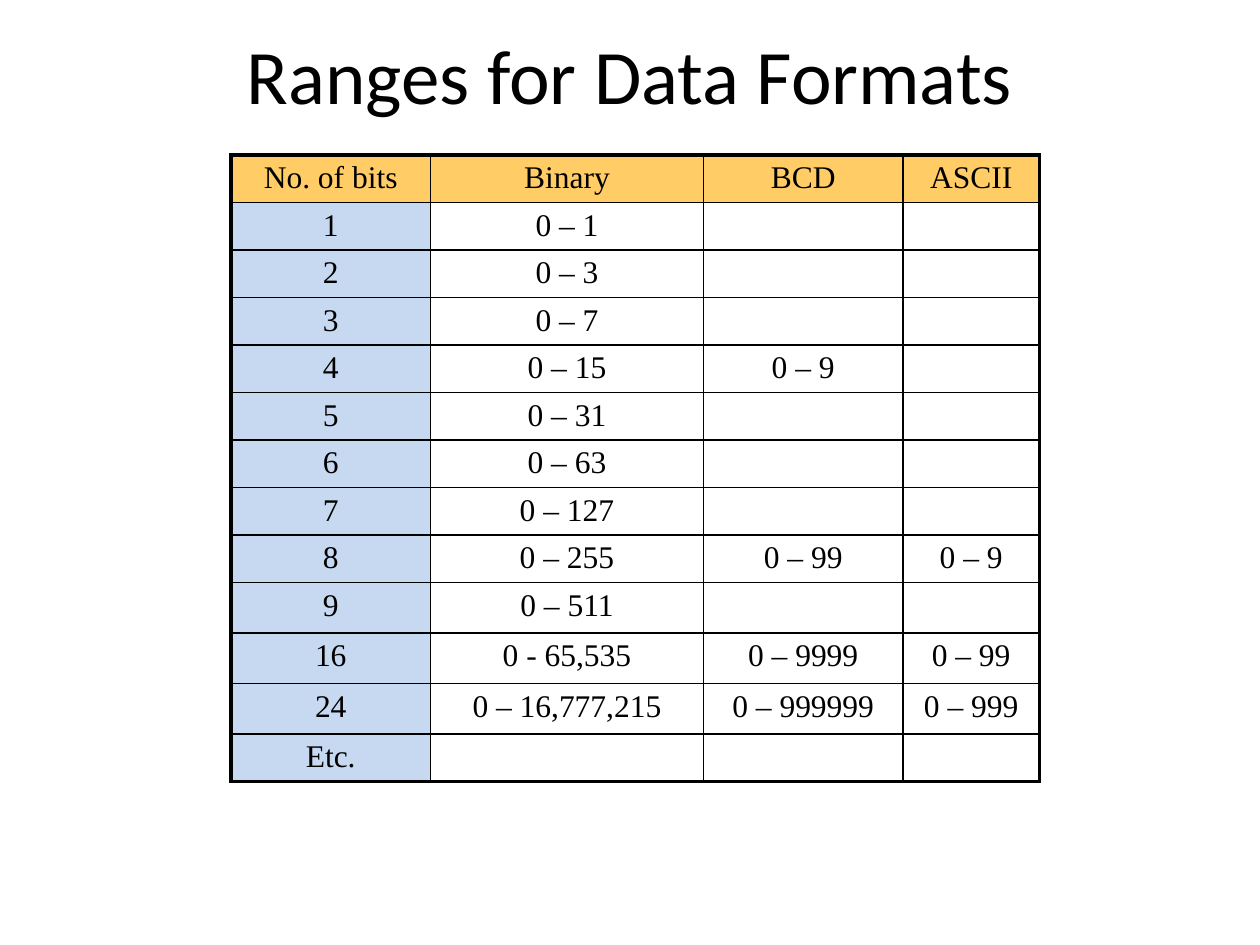
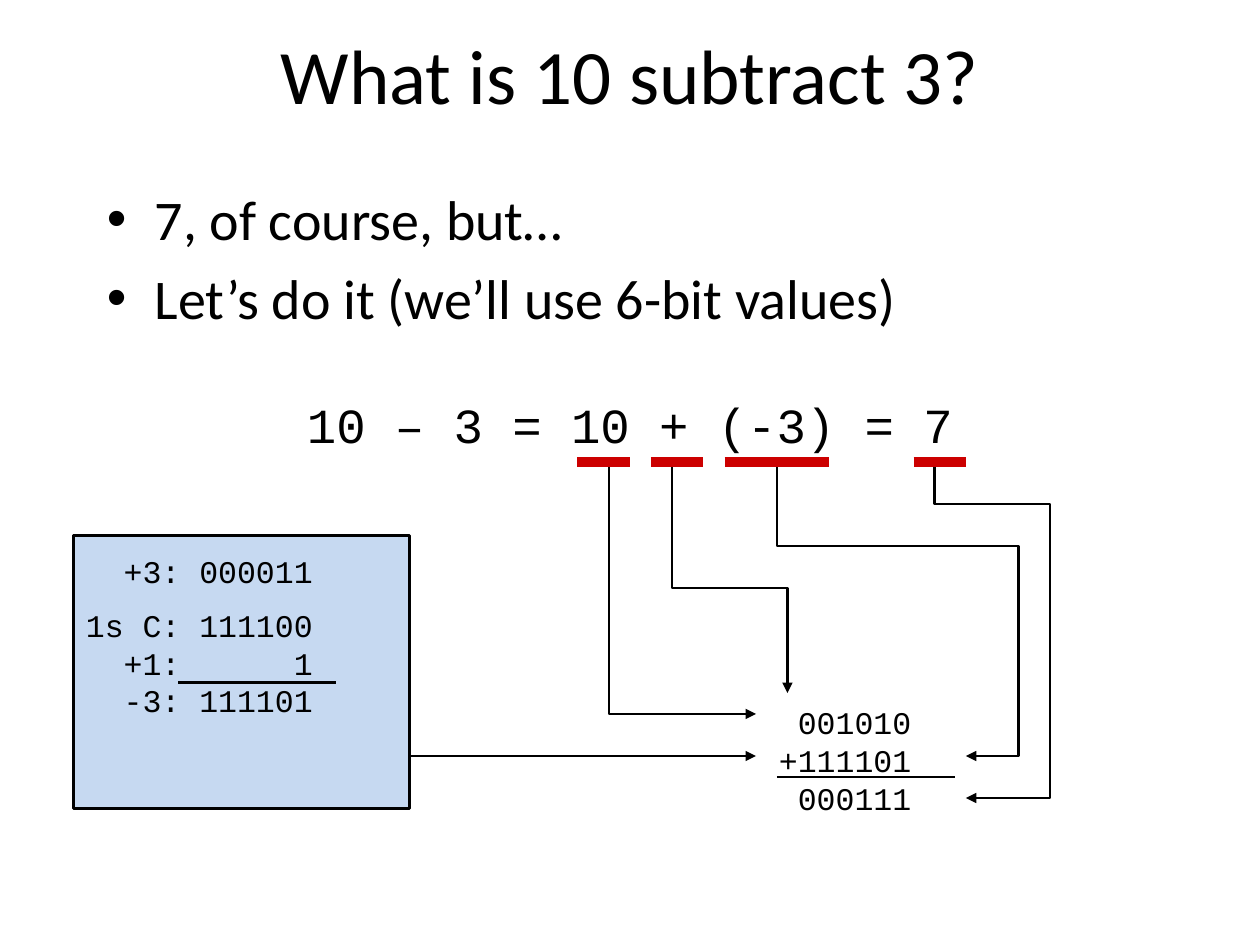
"""Build two slides on data format ranges and two's complement subtraction."""
from dataclasses import dataclass

from lxml import etree
from pptx import Presentation
from pptx.dml.color import RGBColor
from pptx.enum.shapes import MSO_CONNECTOR, MSO_SHAPE
from pptx.enum.text import MSO_ANCHOR, PP_ALIGN
from pptx.oxml.ns import qn
from pptx.util import Emu, Inches, Pt

BLACK = RGBColor(0x00, 0x00, 0x00)
RED = RGBColor(0xCC, 0x00, 0x00)
ORANGE = RGBColor(0xFF, 0xCC, 0x66)
PALE_BLUE = RGBColor(0xC6, 0xD9, 0xF1)
LEFT, CENTER = PP_ALIGN.LEFT, PP_ALIGN.CENTER
TOP, MIDDLE = MSO_ANCHOR.TOP, MSO_ANCHOR.MIDDLE
STRAIGHT = MSO_CONNECTOR.STRAIGHT
RECTANGLE = MSO_SHAPE.RECTANGLE
SANS, SERIF, MONO = "Calibri", "Times New Roman", "Courier New"

WIDTH, HEIGHT = Inches(10), Inches(7.5)
GRID_COLUMNS = 120
UNIT = WIDTH // GRID_COLUMNS
INDENT = Inches(0.38)

RANGE_COLUMNS = (19, 26, 19, 13)
RANGES = (
    ("No. of bits", "Binary", "BCD", "ASCII"),
    ("1", "0 – 1", "", ""),
    ("2", "0 – 3", "", ""),
    ("3", "0 – 7", "", ""),
    ("4", "0 – 15", "0 – 9", ""),
    ("5", "0 – 31", "", ""),
    ("6", "0 – 63", "", ""),
    ("7", "0 – 127", "", ""),
    ("8", "0 – 255", "0 – 99", "0 – 9"),
    ("9", "0 – 511", "", ""),
    ("16", "0 - 65,535", "0 – 9999", "0 – 99"),
    ("24", "0 – 16,777,215", "0 – 999999", "0 – 999"),
    ("Etc.", "", "", ""),
)
TALL_ROWS = (9, 10, 11)
ROW_HEIGHT, TALL_ROW_HEIGHT = 4.53, 4.8
CELL_MARGIN_TOP, CELL_MARGIN_BOTTOM = 0.55, 0.35


@dataclass(frozen=True)
class Box:
    """A rectangle in grid units."""
    left: float
    top: float
    width: float
    height: float

    def emu(self) -> tuple[Emu, ...]:
        return tuple(grid(v) for v in (self.left, self.top, self.width, self.height))


@dataclass(frozen=True)
class Rule:
    """A horizontal line in grid units."""
    start: float
    end: float
    row: float
    color: RGBColor = BLACK
    weight: float = 1.5
    arrow: bool = False


TITLE = Box(9, 2, 102, 10)
UNDERLINE_ROW = 44
UNDERLINES = ((55, 60), (62, 67), (69, 79), (87, 92))
RULES = (
    Rule(17, 32, 65),
    Rule(74, 91, 74),
    Rule(39, 72, 72, arrow=True),
)
ROUTES = (
    ((58, UNDERLINE_ROW), (58, 68), (72, 68)),
    ((64, UNDERLINE_ROW), (64, 56), (75, 56), (75, 66)),
    ((74, UNDERLINE_ROW), (74, 52), (97, 52), (97, 72), (92, 72)),
    ((89, UNDERLINE_ROW), (89, 48), (100, 48), (100, 76), (92, 76)),
)


def grid(units: float) -> Emu:
    return Emu(round(units * UNIT))


def write(frame, *paragraphs: str, font: str = SANS, size: float = 18,
          align=LEFT, before: int = 0, bullet: str = "") -> None:
    """Fill a text frame; before is a percentage of the line."""
    for index, text in enumerate(paragraphs):
        paragraph = frame.paragraphs[0] if index == 0 else frame.add_paragraph()
        paragraph.text = text
        paragraph.alignment = align
        properties = paragraph._p.get_or_add_pPr()
        if before:
            spacing = etree.SubElement(properties, qn("a:spcBef"))
            etree.SubElement(spacing, qn("a:spcPct"), val=str(before * 1000))
        if bullet:
            properties.set("marL", str(INDENT))
            properties.set("indent", str(-INDENT))
            etree.SubElement(properties, qn("a:buFont"), typeface="Arial")
            etree.SubElement(properties, qn("a:buChar"), char=bullet)
        for run in paragraph.runs:
            run.font.name = font
            run.font.size = Pt(size)
            run.font.color.rgb = BLACK
        if not text:
            ending = etree.SubElement(paragraph._p, qn("a:endParaRPr"), sz=str(size * 100))
            etree.SubElement(ending, qn("a:latin"), typeface=font)


def add_text(slide, box: Box, *paragraphs: str, anchor=TOP, **style) -> None:
    frame = slide.shapes.add_textbox(*box.emu()).text_frame
    frame.word_wrap = True
    frame.vertical_anchor = anchor
    write(frame, *paragraphs, **style)


def add_titled_slide(deck, title: str):
    slide = deck.slides.add_slide(deck.slide_layouts[6])
    add_text(slide, TITLE, title, size=44, align=CENTER, anchor=MIDDLE)
    return slide


def style_line(line, color: RGBColor, weight: float, arrow: bool) -> None:
    line.color.rgb = color
    line.width = Pt(weight)
    if arrow:
        etree.SubElement(line._get_or_add_ln(), qn("a:tailEnd"), type="triangle")


def add_rule(slide, rule: Rule) -> None:
    row = grid(rule.row)
    connector = slide.shapes.add_connector(
        STRAIGHT, grid(rule.start), row, grid(rule.end), row)
    style_line(connector.line, rule.color, rule.weight, rule.arrow)
    etree.SubElement(connector._element.spPr, qn("a:effectLst"))


def add_route(slide, points: tuple[tuple[int, int], ...]) -> None:
    start, *corners = [(grid(x), grid(y)) for x, y in points]
    builder = slide.shapes.build_freeform(*start)
    builder.add_line_segments(corners, close=False)
    route = builder.convert_to_shape()
    route.shadow.inherit = False
    route.fill.background()
    style_line(route.line, BLACK, 1.5, True)


def border_cell(cell, thick_sides: dict[str, bool]) -> None:
    properties = cell._tc.get_or_add_tcPr()
    for side, thick in thick_sides.items():
        edge = etree.SubElement(properties, qn(f"a:ln{side}"),
                                w=str(Pt(2.25 if thick else 1)))
        fill = etree.SubElement(edge, qn("a:solidFill"))
        etree.SubElement(fill, qn("a:srgbClr"), val=str(BLACK))


def build_ranges(deck) -> None:
    slide = add_titled_slide(deck, "Ranges for Data Formats")
    heights = [TALL_ROW_HEIGHT if r in TALL_ROWS else ROW_HEIGHT
               for r in range(len(RANGES))]
    place = Box(22, 14.75, sum(RANGE_COLUMNS), sum(heights))
    ranges = slide.shapes.add_table(len(RANGES), len(RANGE_COLUMNS), *place.emu()).table
    for column, width in zip(ranges.columns, RANGE_COLUMNS):
        column.width = grid(width)
    for r, (values, height) in enumerate(zip(RANGES, heights)):
        ranges.rows[r].height = grid(height)
        for c, value in enumerate(values):
            cell = ranges.cell(r, c)
            cell.margin_top = grid(CELL_MARGIN_TOP)
            cell.margin_bottom = grid(CELL_MARGIN_BOTTOM)
            border_cell(cell, {"L": c == 0, "R": c == len(values) - 1,
                               "T": r == 0, "B": r == len(RANGES) - 1})
            if r == 0 or c == 0:
                cell.fill.solid()
                cell.fill.fore_color.rgb = ORANGE if r == 0 else PALE_BLUE
            else:
                cell.fill.background()
            write(cell.text_frame, value, font=SERIF, align=CENTER, before=20)


def build_subtraction(deck) -> None:
    slide = add_titled_slide(deck, "What is 10 subtract 3?")
    add_text(slide, Box(9, 17, 102, 54), "7, of course, but…",
             "Let’s do it (we’ll use 6-bit values)", size=32, before=20, bullet="•")
    add_text(slide, Box(21, 37, 78, 6.8), "10 – 3 = 10 + (-3) = 7",
             font=MONO, size=28, align=CENTER, before=50)

    panel = slide.shapes.add_shape(RECTANGLE, *Box(7, 51, 32, 26).emu())
    panel.shadow.inherit = False
    panel.fill.solid()
    panel.fill.fore_color.rgb = PALE_BLUE
    style_line(panel.line, BLACK, 1.5, False)

    addition = "\n".join(f"{term:>7}" for term in ("001010", "+111101", "000111"))
    add_text(slide, Box(73, 66.4, 21, 15.6), addition, font=MONO, before=50)
    steps = (("+3", "000011"), ("1s C", "111100"), ("+1", "1"), ("-3", "111101"))
    first, *rest = [f"{label:>4}: {bits:>6}" for label, bits in steps]
    add_text(slide, Box(7, 52, 36, 22.8), first, "\n".join(rest), font=MONO, before=50)

    for rule in RULES:
        add_rule(slide, rule)
    for route in ROUTES:
        add_route(slide, route)
    for start, end in UNDERLINES:
        add_rule(slide, Rule(start, end, UNDERLINE_ROW, RED, 6))


def main() -> None:
    deck = Presentation()
    deck.slide_width, deck.slide_height = WIDTH, HEIGHT
    build_ranges(deck)
    build_subtraction(deck)
    deck.save("out.pptx")


if __name__ == "__main__":
    main()
